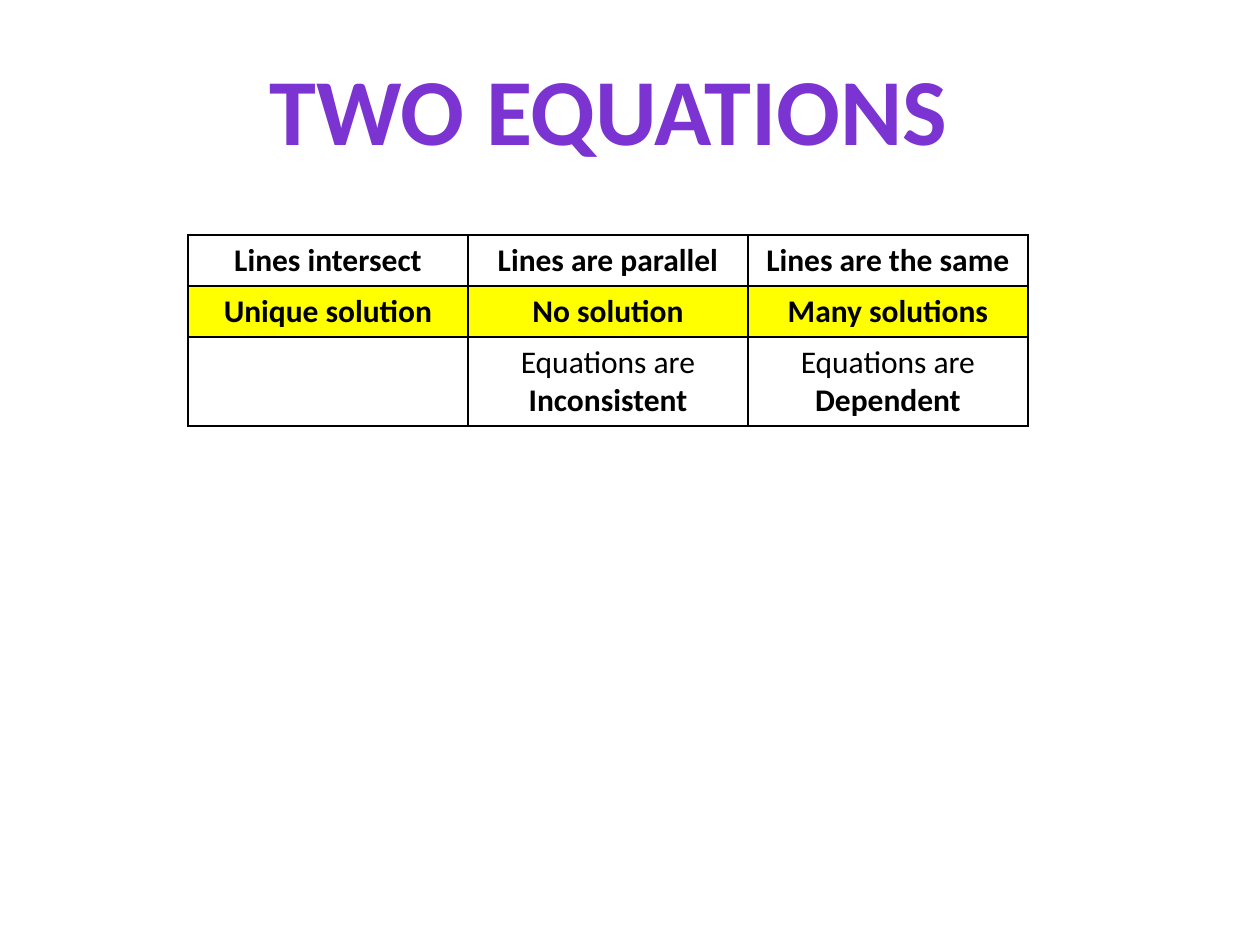
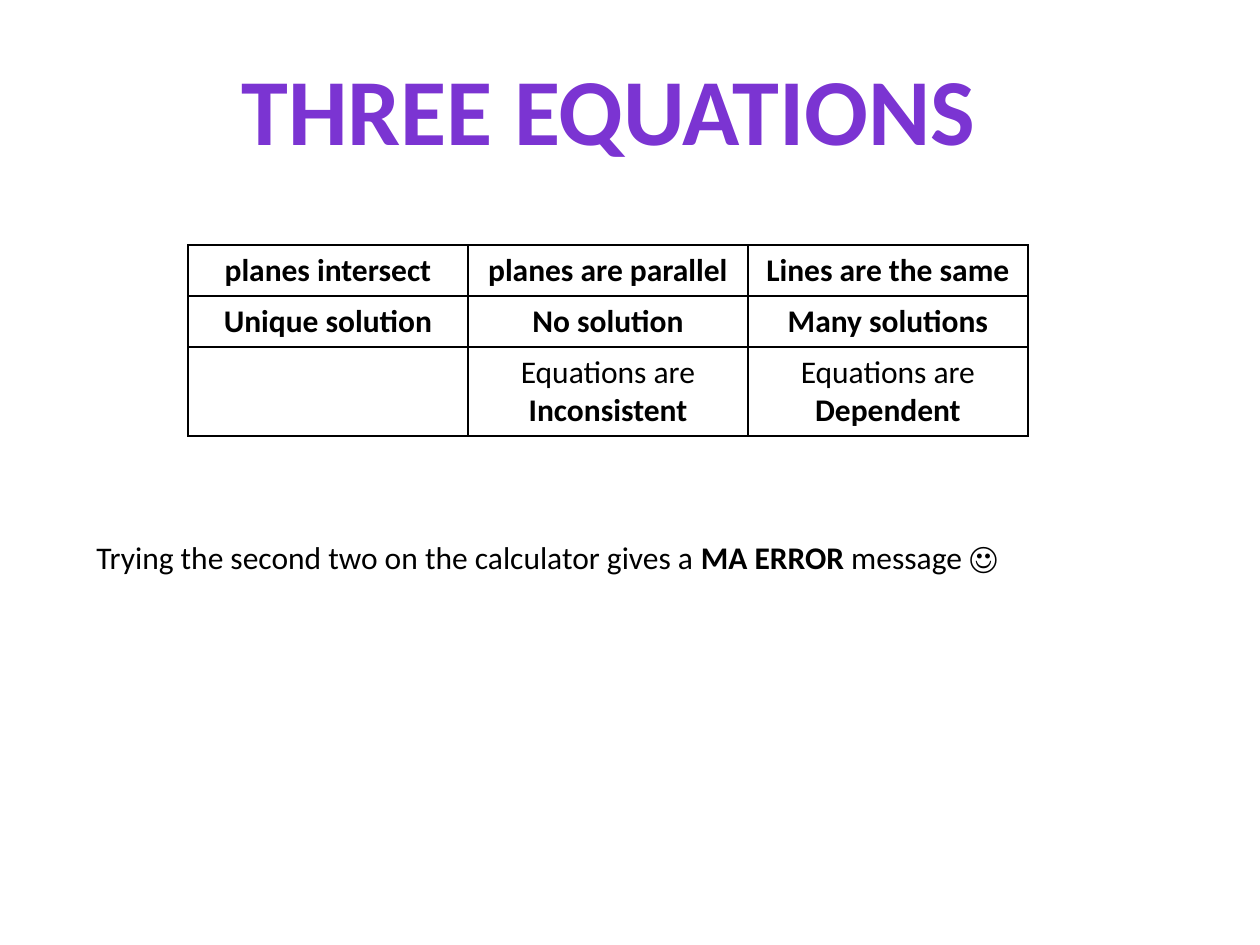
from dataclasses import dataclass

from lxml import etree
from pptx import Presentation
from pptx import util as u
from pptx.dml.color import RGBColor
from pptx.enum import text
from pptx.oxml import ns

EMU_PER_PX = 914400 / 126
FONT = "Calibri"
COLORS = {
    "text": "000000",
    "border": "000000",
    "highlight": "FFFF00",
    "title_dark": "3D1B67",
    "title_bright": "7B34D2",
    "title_mid": "7330C4",
    "title_outline": "5E457C",
}
TITLE_STOPS = {0: "title_dark", 43: "title_bright", 48: "title_mid", 100: "title_dark"}
BODY_FORMAT = {"name": FONT, "size": u.Pt(18)}
TITLE_FORMAT = {"name": FONT, "size": u.Pt(54), "bold": True}
CENTER_X = 608
COLUMN_WIDTH = 280
ROW_HEIGHTS = (51, 51, 89)
BORDER_WIDTH = u.Pt(1)
OUTLINE_WIDTH = u.Pt(0.71)


@dataclass(frozen=True)
class Phrase:
    words: str
    bold: bool = False


@dataclass(frozen=True)
class Box:
    left: int
    top: int
    width: int
    height: int

    def emu(self) -> tuple:
        return tuple(px(n) for n in (self.left, self.top, self.width, self.height))


@dataclass(frozen=True)
class EquationSlide:
    title: str
    title_width: int
    table_top: int
    geometry: tuple
    highlight_solutions: bool = False
    note: tuple = ()


SOLUTIONS = ("Unique solution", "No solution", "Many solutions")
KINDS = ("", "Inconsistent", "Dependent")
NOTE_BOX = Box(84, 532, 1071, 50)
SLIDES = (
    EquationSlide(
        "TWO EQUATIONS", 709, 235,
        ("Lines intersect", "Lines are parallel", "Lines are the same"),
        highlight_solutions=True,
    ),
    EquationSlide(
        "THREE EQUATIONS", 767, 245,
        ("planes intersect", "planes are parallel", "Lines are the same"),
        note=(
            Phrase("Trying the second two on the calculator gives a "),
            Phrase("MA ERROR", True),
            Phrase(" message ☺"),
        ),
    ),
)


def px(length: int) -> int:
    return round(length * EMU_PER_PX)


def apply(target, values: dict) -> None:
    for name, value in values.items():
        setattr(target, name, value)


def add_xml(parent, tag: str, **attributes):
    return etree.SubElement(parent, ns.qn(tag), {k: str(v) for k, v in attributes.items()})


def add_solid(parent, color: str) -> None:
    add_xml(add_xml(parent, "a:solidFill"), "a:srgbClr", val=COLORS[color])


def write_phrase(paragraph, phrase: Phrase) -> None:
    run = paragraph.add_run()
    run.text = phrase.words
    apply(run.font, {**BODY_FORMAT, "bold": phrase.bold})
    run.font.color.rgb = RGBColor.from_string(COLORS["text"])


def add_text_frame(slide, box: Box, wrap: bool):
    frame = slide.shapes.add_textbox(*box.emu()).text_frame
    apply(frame, {"word_wrap": wrap, "auto_size": text.MSO_AUTO_SIZE.SHAPE_TO_FIT_TEXT})
    return frame


def add_title(slide, title: str, width: int) -> None:
    frame = add_text_frame(slide, Box(CENTER_X - width // 2, 45, width, 128), False)
    heading = frame.paragraphs[0]
    heading.alignment = text.PP_ALIGN.CENTER
    run = heading.add_run()
    run.text = title
    properties = run._r.get_or_add_rPr()
    add_solid(add_xml(properties, "a:ln", w=OUTLINE_WIDTH), "title_outline")
    gradient = add_xml(properties, "a:gradFill")
    stops = add_xml(gradient, "a:gsLst")
    for percent, color in TITLE_STOPS.items():
        stop = add_xml(stops, "a:gs", pos=percent * 1000)
        add_xml(stop, "a:srgbClr", val=COLORS[color])
    add_xml(gradient, "a:lin", ang=90 * 60000, scaled=0)
    apply(run.font, TITLE_FORMAT)


def style_cell(cell, highlighted: bool) -> None:
    cell.vertical_anchor = text.MSO_ANCHOR.MIDDLE
    properties = cell._tc.get_or_add_tcPr()
    for side in ("L", "R", "T", "B"):
        add_solid(add_xml(properties, f"a:ln{side}", w=BORDER_WIDTH), "border")
    if highlighted:
        cell.fill.solid()
        cell.fill.fore_color.rgb = RGBColor.from_string(COLORS["highlight"])
    else:
        cell.fill.background()


def write_cell(cell, lines: tuple) -> None:
    for index, phrase in enumerate(lines):
        frame = cell.text_frame
        paragraph = frame.add_paragraph() if index else frame.paragraphs[0]
        paragraph.alignment = text.PP_ALIGN.CENTER
        write_phrase(paragraph, phrase)


def add_solution_table(slide, content: EquationSlide) -> None:
    rows = (
        [(Phrase(case, True),) for case in content.geometry],
        [(Phrase(solution, True),) for solution in SOLUTIONS],
        [(Phrase("Equations are"), Phrase(kind, True)) if kind else () for kind in KINDS],
    )
    width = COLUMN_WIDTH * len(SOLUTIONS)
    box = Box(CENTER_X - width // 2, content.table_top, width, sum(ROW_HEIGHTS))
    table = slide.shapes.add_table(len(rows), len(SOLUTIONS), *box.emu()).table
    apply(table, {"first_row": False, "horz_banding": False})
    for column in table.columns:
        column.width = px(COLUMN_WIDTH)
    for row_index, (cells, height) in enumerate(zip(rows, ROW_HEIGHTS)):
        table.rows[row_index].height = px(height)
        for column_index, lines in enumerate(cells):
            cell = table.cell(row_index, column_index)
            style_cell(cell, content.highlight_solutions and row_index == 1)
            write_cell(cell, lines)


def add_note(slide, note: tuple) -> None:
    paragraph = add_text_frame(slide, NOTE_BOX, True).paragraphs[0]
    for phrase in note:
        write_phrase(paragraph, phrase)


def main() -> None:
    deck = Presentation()
    apply(deck, {"slide_width": px(1260), "slide_height": px(945)})
    for content in SLIDES:
        slide = deck.slides.add_slide(deck.slide_layouts[6])
        add_title(slide, content.title, content.title_width)
        add_solution_table(slide, content)
        if content.note:
            add_note(slide, content.note)
    deck.save("out.pptx")


if __name__ == "__main__":
    main()
